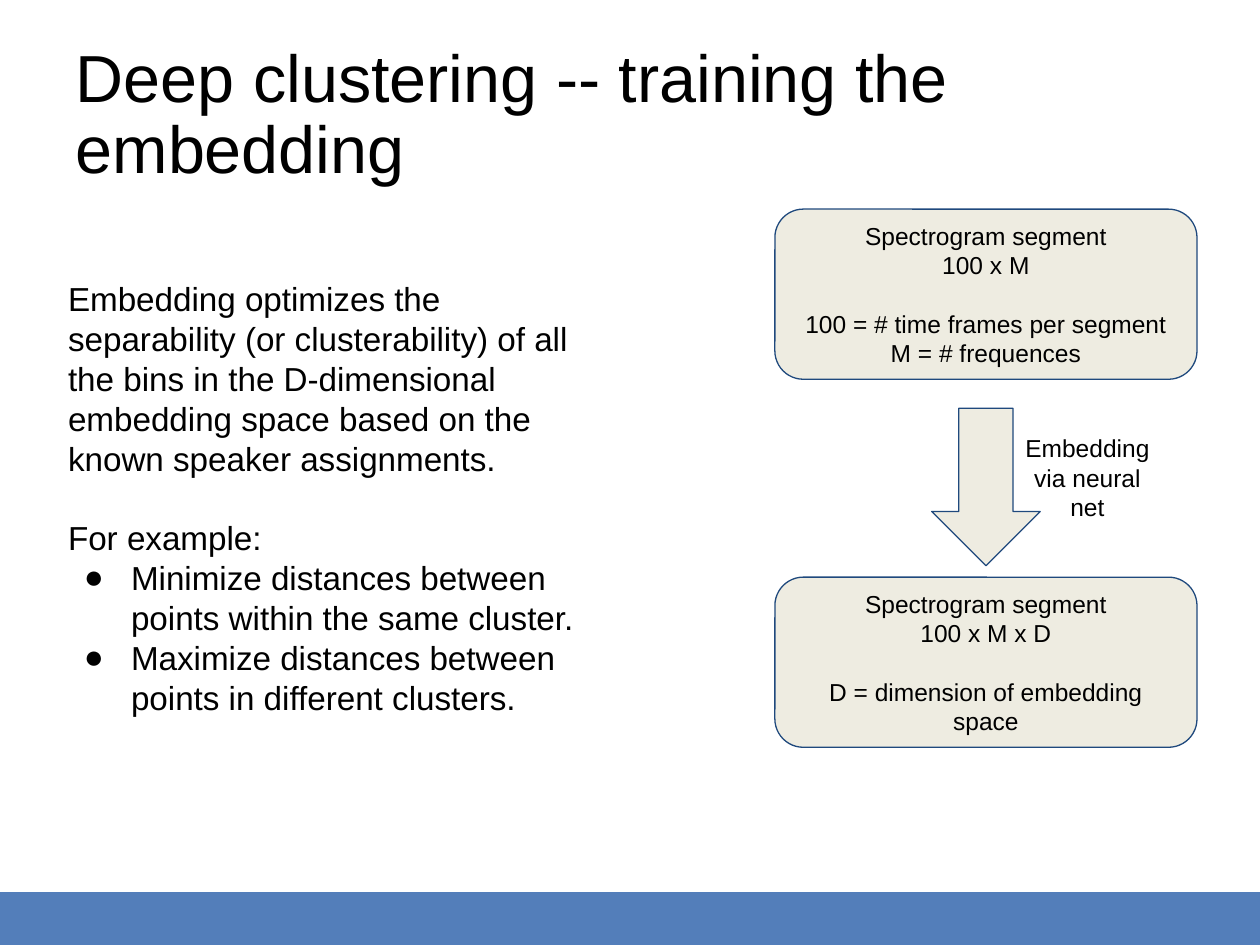
from pptx import Presentation
from pptx.dml.color import RGBColor
from pptx.enum.shapes import MSO_SHAPE as Shape
from pptx.enum.text import MSO_ANCHOR as Anchor, MSO_AUTO_SIZE as AutoSize, PP_ALIGN as Align
from pptx.oxml.ns import qn
from pptx.util import Pt
from lxml.etree import SubElement

BLACK, WHITE, CREAM, NAVY, BLUE = "000000", "FFFFFF", "EEECE1", "1F497D", "537EBA"


def color(value):
    return RGBColor.from_string(value)


class SlideBuilder:
    """Holds the slide being built and its shared style; lengths are points."""
    font = "Arial"
    inset = 7.2
    label_size = 14
    body_size = 19
    title_size = 38
    line_height = 1.2

    def __init__(self, page):
        self.page = page
        page.background.fill.solid()
        page.background.fill.fore_color.rgb = color(WHITE)

    def place(self, box, left, top, width, height):
        box.left, box.top, box.width, box.height = map(Pt, (left, top, width, height))

    def frame(self, box, anchor):
        frame = box.text_frame
        frame.word_wrap = True
        frame.auto_size = AutoSize.NONE
        frame.vertical_anchor = anchor
        frame.margin_left = frame.margin_right = Pt(self.inset)
        frame.margin_top = frame.margin_bottom = Pt(self.inset)
        return frame

    def add_lines(self, frame, lines, size, align, gap_at=None, bullets_from=None):
        """Fill a frame; gap_at is the line that follows a one-line gap."""
        for index, line in enumerate(lines):
            para = frame.paragraphs[0] if index == 0 else frame.add_paragraph()
            para.text = line
            para.alignment = align
            para.space_before = Pt(size * self.line_height if index == gap_at else 0)
            if bullets_from is not None:
                self.bullet(para, index >= bullets_from)
            para.font.name = self.font
            para.font.size = Pt(size)
            para.font.color.rgb = color(BLACK)

    def bullet(self, para, shown):
        properties = para._p.get_or_add_pPr()
        properties.set("marL", str(Pt(36 if shown else 0)))
        properties.set("indent", str(Pt(-27 if shown else 0)))
        if shown:
            SubElement(properties, qn("a:buChar")).set("char", "●")
        else:
            SubElement(properties, qn("a:buNone"))

    def title(self, text, *bounds):
        box = self.page.shapes.title
        self.place(box, *bounds)
        frame = self.frame(box, Anchor.MIDDLE)
        self.add_lines(frame, [text], self.title_size, Align.LEFT)
        frame.paragraphs[0].line_spacing = 0.9

    def body(self, lines, *bounds, **layout):
        box = self.page.placeholders[1]
        self.place(box, *bounds)
        self.add_lines(self.frame(box, Anchor.TOP), lines, self.body_size, Align.LEFT, **layout)

    def shape(self, kind, *bounds, fill=CREAM, line=NAVY):
        box = self.page.shapes.add_shape(kind, *map(Pt, bounds))
        box.shadow.inherit = False
        box.fill.solid()
        box.fill.fore_color.rgb = color(fill)
        if line:
            box.line.color.rgb = color(line)
            box.line.width = Pt(0.75)
        else:
            box.line.fill.background()
        return box

    def card(self, lines, *bounds, gap_at):
        box = self.shape(Shape.ROUNDED_RECTANGLE, *bounds)
        self.add_lines(self.frame(box, Anchor.MIDDLE), lines, self.label_size, Align.CENTER, gap_at)

    def label(self, text, *bounds):
        box = self.page.shapes.add_textbox(*map(Pt, bounds))
        self.add_lines(self.frame(box, Anchor.TOP), [text], self.label_size, Align.CENTER)


def main():
    deck = Presentation()
    deck.slide_width, deck.slide_height = Pt(720), Pt(540)
    slide = SlideBuilder(deck.slides.add_slide(deck.slide_layouts[1]))

    slide.shape(Shape.RECTANGLE, 0, 509.8, 720, 30.2, fill=BLUE, line=None)
    slide.title("Deep clustering -- training the embedding", 36, 21.6, 648, 90)

    card_left, card_width, card_height = 442.8, 241.2, 97.2
    cards = [
        (119.5, ["Spectrogram segment\n100 x M",
                 "100 = # time frames per segment", "M = # frequences"]),
        (329.8, ["Spectrogram segment\n100 x M x D", "D = dimension of embedding space"]),
    ]
    for top, lines in cards:
        slide.card(lines, card_left, top, card_width, card_height, gap_at=1)

    arrow_width = 62
    arrow_left = card_left + (card_width - arrow_width) / 2
    slide.shape(Shape.DOWN_ARROW, arrow_left, 233.3, arrow_width, 90)
    slide.label("Embedding via neural net", 578.2, 240.5, 86.4, 74.2)

    slide.body(
        ["Embedding optimizes the separability (or clusterability) of all the bins in the "
         "D-dimensional embedding space based on the known speaker assignments.",
         "For example:",
         "Minimize distances between points within the same cluster.",
         "Maximize distances between points in different clusters."],
        31.7, 151.9, 317.5, 236.2, gap_at=1, bullets_from=2)

    deck.save("out.pptx")


if __name__ == "__main__":
    main()
